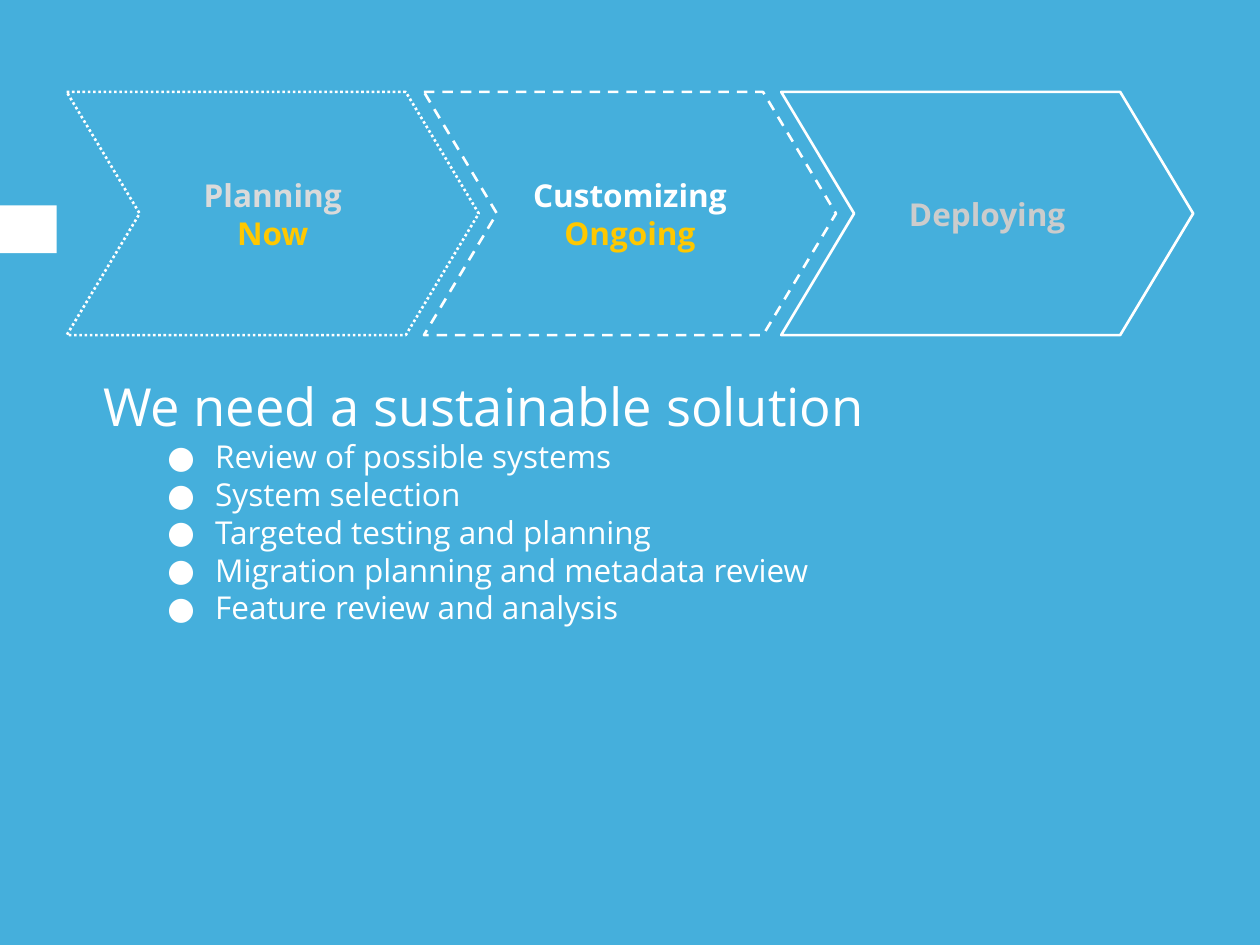
from dataclasses import dataclass
from typing import Optional

from lxml import etree
from pptx import Presentation
from pptx.dml.color import RGBColor
from pptx.enum.dml import MSO_LINE
from pptx.enum.shapes import MSO_SHAPE
from pptx.enum.text import MSO_ANCHOR, PP_ALIGN
from pptx.oxml.ns import qn
from pptx.util import Inches, Pt

RECT, CHEVRON = MSO_SHAPE.RECTANGLE, MSO_SHAPE.CHEVRON
SOLID, DASH, DOT = MSO_LINE.SOLID, MSO_LINE.DASH, MSO_LINE.ROUND_DOT
LEFT, CENTER = PP_ALIGN.LEFT, PP_ALIGN.CENTER
TOP, MIDDLE = MSO_ANCHOR.TOP, MSO_ANCHOR.MIDDLE

FONT = "Open Sans"
BLUE, WHITE, YELLOW = "45AFDC", "FFFFFF", "FFC800"
INSET = 0.1
STAGE_LEFT, STAGE_STEP = 0.53, 2.835


@dataclass
class Stage:
    name: str
    color: str
    dash: MSO_LINE
    status: Optional[str] = None


STAGES = [
    Stage("Planning", "DADADA", DOT, "Now"),
    Stage("Customizing", WHITE, DASH, "Ongoing"),
    Stage("Deploying", "CCCCCC", SOLID),
]
HEADING = "We need a sustainable solution"
STEPS = [
    "Review of possible systems",
    "System selection",
    "Targeted testing and planning",
    "Migration planning and metadata review",
    "Feature review and analysis",
]


def rgb(color: str) -> RGBColor:
    return RGBColor.from_string(color)


def set_frame(tf, anchor: MSO_ANCHOR, top: float = INSET) -> None:
    tf.word_wrap = True
    tf.vertical_anchor = anchor
    tf.margin_left = tf.margin_right = tf.margin_bottom = Inches(INSET)
    tf.margin_top = Inches(top)


def add_text(tf, text: str, *, size: float = 18, color: str = WHITE,
             bold: bool = False, align: PP_ALIGN = LEFT, margin: float = 0,
             indent: float = 0, bullet: Optional[str] = None) -> None:
    """Fill the empty first paragraph, or append a new one."""
    p = tf.paragraphs[0] if not tf.text else tf.add_paragraph()
    p.alignment = align
    pPr = p._p.get_or_add_pPr()
    pPr.set("marL", str(Inches(margin)))
    pPr.set("indent", str(Inches(indent)))
    if bullet:
        bu_color = etree.SubElement(pPr, qn("a:buClr"))
        etree.SubElement(bu_color, qn("a:srgbClr"), val=color)
        etree.SubElement(pPr, qn("a:buFont"), typeface=FONT)
        etree.SubElement(pPr, qn("a:buChar"), char=bullet)
    r = p.add_run()
    r.text = text
    r.font.name = FONT
    r.font.size = Pt(size)
    r.font.bold = bold
    r.font.color.rgb = rgb(color)


def add_stage(slide, stage: Stage, left: float) -> None:
    sp = slide.shapes.add_shape(CHEVRON, Inches(left), Inches(0.73),
                                Inches(3.27), Inches(1.93))
    sp.adjustments[0] = 0.3
    sp.shadow.inherit = False
    sp.fill.background()
    sp.line.color.rgb = rgb(WHITE)
    sp.line.width = Pt(1.5)
    sp.line.dash_style = stage.dash
    tf = sp.text_frame
    set_frame(tf, MIDDLE)
    add_text(tf, stage.name, color=stage.color, bold=True, align=CENTER)
    if stage.status:
        add_text(tf, stage.status, color=YELLOW, bold=True, align=CENTER)


def add_side_tab(slide) -> None:
    sp = slide.shapes.add_shape(RECT, 0, Inches(1.63), Inches(0.45), Inches(0.38))
    sp.shadow.inherit = False
    sp.fill.solid()
    sp.fill.fore_color.rgb = rgb(WHITE)
    sp.line.fill.background()


def add_body(slide) -> None:
    sp = slide.shapes.add_textbox(Inches(0.61), Inches(2.37),
                                  Inches(8.77), Inches(4.1))
    tf = sp.text_frame
    set_frame(tf, TOP, top=0.6)
    add_text(tf, HEADING, size=30, margin=0.11)
    for step in STEPS:
        add_text(tf, step, margin=1, indent=-0.38, bullet="●")


def main() -> None:
    prs = Presentation()
    prs.slide_width, prs.slide_height = Inches(10), Inches(7.5)
    slide = prs.slides.add_slide(prs.slide_layouts[6])
    slide.background.fill.solid()
    slide.background.fill.fore_color.rgb = rgb(BLUE)
    add_side_tab(slide)
    add_body(slide)
    for i, stage in enumerate(STAGES):
        add_stage(slide, stage, STAGE_LEFT + i * STAGE_STEP)
    prs.save("out.pptx")


if __name__ == "__main__":
    main()
